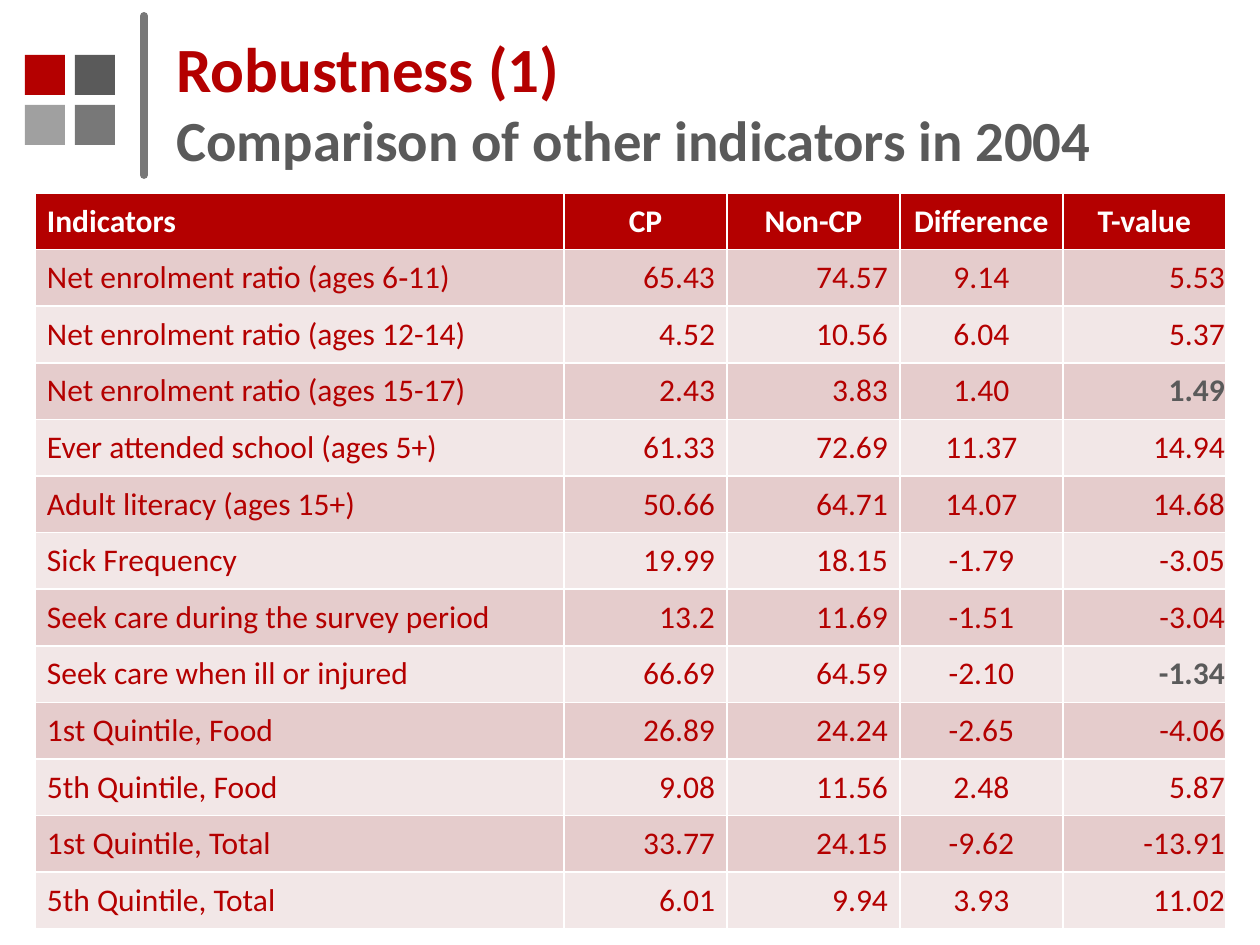
from lxml import etree
from pptx import Presentation, util as u
from pptx.dml.color import RGBColor
from pptx.enum import shapes, text
from pptx.oxml.ns import qn

PX = 914400 / 126
FONT = "Calibri"
RED, DARK, GREY, LIGHT, WHITE = "B40000", "5A5A5A", "787878", "A0A0A0", "FFFFFF"
BANDS = ("E5CCCC", "F2E7E7")
LEFT, CENTER, RIGHT = text.PP_ALIGN.LEFT, text.PP_ALIGN.CENTER, text.PP_ALIGN.RIGHT

COLUMN_WIDTHS = (529, 163, 173, 163, 163)
HEADER_ALIGNS = (LEFT, CENTER, CENTER, CENTER, CENTER)
BODY_ALIGNS = (LEFT, RIGHT, RIGHT, CENTER, RIGHT)
HEADER_INSETS = (12, 12, 12, 12, 12)
BODY_INSETS = (12, 12, 12, 1, 1)
INSIGNIFICANT = ("1.49", "-1.34")
HEADERS = ("Indicators", "CP", "Non-CP", "Difference", "T-value")
INDICATORS = (
    ("Net enrolment ratio (ages 6‐11)", "65.43", "74.57", "9.14", "5.53"),
    ("Net enrolment ratio (ages 12-14)", "4.52", "10.56", "6.04", "5.37"),
    ("Net enrolment ratio (ages 15-17)", "2.43", "3.83", "1.40", "1.49"),
    ("Ever attended school (ages 5+)", "61.33", "72.69", "11.37", "14.94"),
    ("Adult literacy (ages 15+)", "50.66", "64.71", "14.07", "14.68"),
    ("Sick Frequency", "19.99", "18.15", "-1.79", "-3.05"),
    ("Seek care during the survey period", "13.2", "11.69", "-1.51", "-3.04"),
    ("Seek care when ill or injured", "66.69", "64.59", "-2.10", "-1.34"),
    ("1st Quintile, Food", "26.89", "24.24", "-2.65", "-4.06"),
    ("5th Quintile, Food", "9.08", "11.56", "2.48", "5.87"),
    ("1st Quintile, Total", "33.77", "24.15", "-9.62", "-13.91"),
    ("5th Quintile, Total", "6.01", "9.94", "3.93", "11.02"),
)


def px(length):
    return u.Emu(round(length * PX))


def color(value):
    return RGBColor.from_string(value)


def set_font(font, size, fill, bold):
    font.name, font.size, font.bold = FONT, u.Pt(size), bold
    font.color.rgb = color(fill)


def add_square(slide, left, top, fill):
    square = slide.shapes.add_shape(
        shapes.MSO_SHAPE.RECTANGLE, px(left), px(top), px(40), px(40))
    square.shadow.inherit = False
    square.fill.solid()
    square.fill.fore_color.rgb = color(fill)
    square.line.fill.background()


def add_divider(slide, x, top, bottom):
    """Draw a vertical line with round ends."""
    divider = slide.shapes.add_connector(
        shapes.MSO_CONNECTOR.STRAIGHT, px(x), px(top), px(x), px(bottom))
    divider.line.width = u.Pt(4.5)
    divider.line.color.rgb = color(GREY)
    divider.line._get_or_add_ln().set("cap", "rnd")
    etree.SubElement(divider._element.spPr, qn("a:effectLst"))


def add_title(slide, heading, subheading):
    box = slide.shapes.add_textbox(px(164), px(37), px(1003), px(128))
    frame = box.text_frame
    frame.word_wrap = True
    frame.vertical_anchor = text.MSO_ANCHOR.MIDDLE
    para = frame.paragraphs[0]
    span = para.add_run()
    span.text = heading
    set_font(span.font, 36, RED, True)
    para.add_line_break()
    span = para.add_run()
    span.text = subheading
    set_font(span.font, 32.4, DARK, True)


def fill_cell(cell, words, fill, ink, bold, align, inset):
    cell.fill.solid()
    cell.fill.fore_color.rgb = color(fill)
    cell.vertical_anchor = text.MSO_ANCHOR.MIDDLE
    cell.margin_left = cell.margin_right = px(inset)
    cell.margin_top = cell.margin_bottom = 0
    para = cell.text_frame.paragraphs[0]
    para.text = words
    para.alignment = align
    set_font(para.font, 18, ink, bold)


def add_indicator_table(slide):
    """Add the table; its default style draws the white cell borders."""
    table = slide.shapes.add_table(
        len(INDICATORS) + 1, len(HEADERS),
        px(35), px(193), px(sum(COLUMN_WIDTHS)), px(736)).table
    for column, width in zip(table.columns, COLUMN_WIDTHS):
        column.width = px(width)
    header = zip(HEADERS, HEADER_ALIGNS, HEADER_INSETS)
    for column, (words, align, inset) in enumerate(header):
        fill_cell(table.cell(0, column), words, RED, WHITE, True, align, inset)
    for row, values in enumerate(INDICATORS):
        body = zip(values, BODY_ALIGNS, BODY_INSETS)
        for column, (words, align, inset) in enumerate(body):
            marked = column == 4 and words in INSIGNIFICANT
            fill_cell(table.cell(row + 1, column), words, BANDS[row % 2],
                      DARK if marked else RED, marked, align, inset)


def main():
    deck = Presentation()
    deck.slide_width, deck.slide_height = px(1260), px(945)
    slide = deck.slides.add_slide(deck.slide_layouts[6])
    for index, fill in enumerate((RED, DARK, LIGHT, GREY)):
        row, column = divmod(index, 2)
        add_square(slide, 25 + 50 * column, 55 + 50 * row, fill)
    add_divider(slide, 144, 16, 175)
    add_title(slide, "Robustness (1)", "Comparison of other indicators in 2004")
    add_indicator_table(slide)
    deck.save("out.pptx")


if __name__ == "__main__":
    main()
